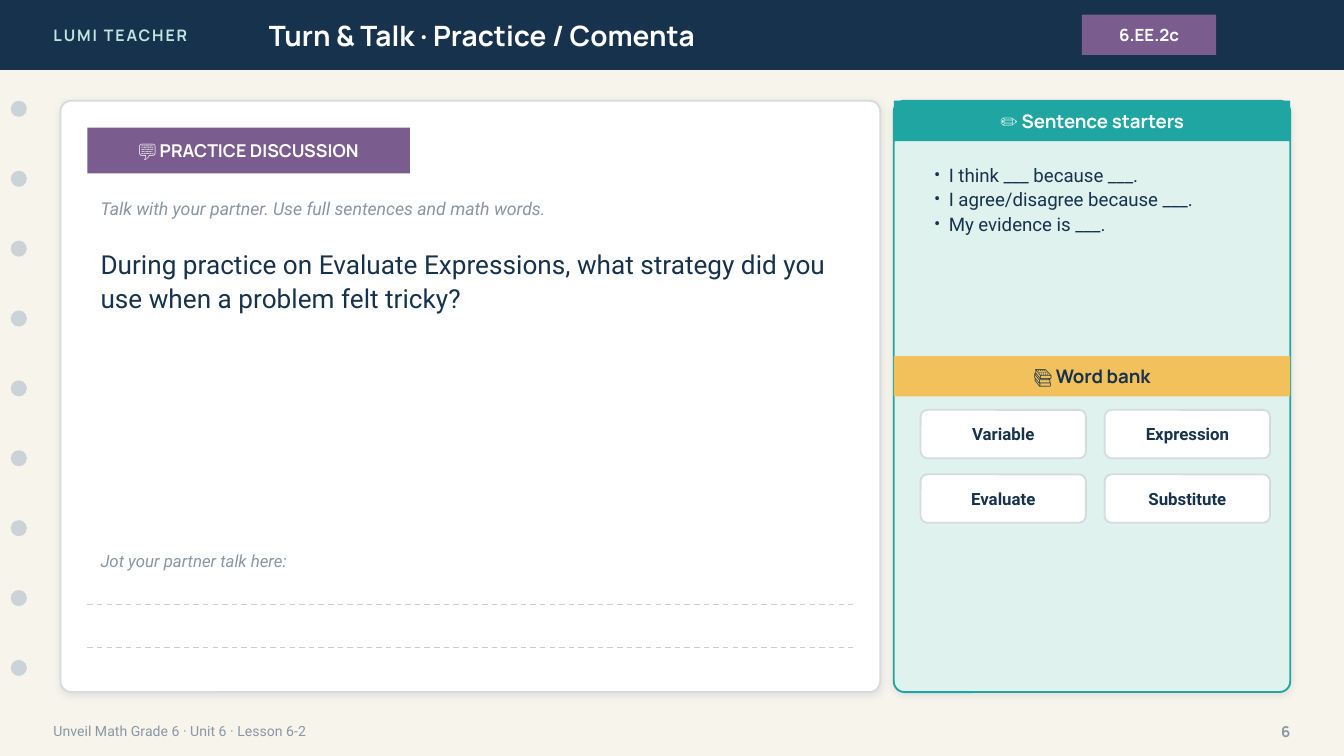
from dataclasses import dataclass
from typing import Optional

from lxml import etree
from pptx import Presentation
from pptx.dml.color import RGBColor
from pptx.enum.dml import MSO_LINE
from pptx.enum.shapes import MSO_CONNECTOR, MSO_SHAPE
from pptx.enum.text import MSO_ANCHOR, MSO_AUTO_SIZE, PP_ALIGN
from pptx.oxml.ns import qn
from pptx.util import Inches, Pt

RECT, ROUNDED, OVAL = MSO_SHAPE.RECTANGLE, MSO_SHAPE.ROUNDED_RECTANGLE, MSO_SHAPE.OVAL
LEFT, CENTER, RIGHT = PP_ALIGN.LEFT, PP_ALIGN.CENTER, PP_ALIGN.RIGHT
TOP, MIDDLE = MSO_ANCHOR.TOP, MSO_ANCHOR.MIDDLE
NO_AUTOFIT, STRAIGHT, DASH = MSO_AUTO_SIZE.NONE, MSO_CONNECTOR.STRAIGHT, MSO_LINE.DASH


@dataclass(frozen=True)
class TextStyle:
    size: float
    color: str
    font: str = "Roboto"
    bold: bool = False
    italic: bool = False
    align: PP_ALIGN = LEFT
    anchor: MSO_ANCHOR = MIDDLE
    line_spacing: float = 1.0
    tracking: float = 0


@dataclass(frozen=True)
class Theme:
    paper: str = "F7F4EC"
    navy: str = "17324D"
    white: str = "FFFFFF"
    purple: str = "7A5C8E"
    teal: str = "1FA6A2"
    mint: str = "DFF2EE"
    gold: str = "F2C15B"
    gray: str = "8A96A3"
    hole: str = "CBD3D9"
    border: str = "D6DBDF"
    rule: str = "C7CDD2"
    shadow: str = "1C2E42"
    brand = TextStyle(8.5, "BFE6E2", "Manrope", bold=True, tracking=1)
    title = TextStyle(15, white, "Manrope", bold=True)
    standard = TextStyle(9, white, "Manrope", bold=True, align=CENTER)
    badge = TextStyle(9.5, white, "Manrope", bold=True, align=CENTER)
    starters_head = TextStyle(10, white, "Manrope", bold=True, align=CENTER)
    words_head = TextStyle(10, navy, "Manrope", bold=True, align=CENTER)
    word = TextStyle(9, navy, bold=True, align=CENTER)
    direction = TextStyle(9.5, gray, italic=True)
    jot = TextStyle(9, gray, italic=True)
    question = TextStyle(14, navy, anchor=TOP, line_spacing=1.08)
    starter = TextStyle(10, navy, anchor=TOP, line_spacing=1.1)
    footer = TextStyle(7.5, gray)
    page = TextStyle(8, gray, "Manrope", bold=True, align=RIGHT)


@dataclass(frozen=True)
class Box:
    left: float
    top: float
    width: float
    height: float

    def lengths(self) -> list:
        return [Inches(v) for v in (self.left, self.top, self.width, self.height)]


THEME = Theme()
HEADER_HEIGHT = 0.52
CARD_TOP, CARD_HEIGHT = 0.75, 4.4
CARD = Box(0.45, CARD_TOP, 6.1, CARD_HEIGHT)
PANEL = Box(6.65, CARD_TOP, 2.95, CARD_HEIGHT)
CONTENT_LEFT, CONTENT_WIDTH = 0.65, 5.7
STARTERS = ["I think ___ because ___.", "I agree/disagree because ___.", "My evidence is ___."]
WORDS = ["Variable", "Expression", "Evaluate", "Substitute"]


def write(shape, text: str, style: TextStyle, bullet_indent: float = 0) -> None:
    frame = shape.text_frame
    frame.text = text
    frame.word_wrap = True
    frame.auto_size = NO_AUTOFIT
    frame.vertical_anchor = style.anchor
    for paragraph in frame.paragraphs:
        if bullet_indent:
            properties = paragraph._p.get_or_add_pPr()
            properties.set("marL", str(Inches(bullet_indent)))
            properties.set("indent", str(-Inches(bullet_indent)))
            etree.SubElement(properties, qn("a:buFont"), typeface=style.font)
            etree.SubElement(properties, qn("a:buChar"), char="•")
        paragraph.alignment = style.align
        paragraph.line_spacing = style.line_spacing
        paragraph.space_before = Pt(0)
        for run in paragraph.runs:
            font = run.font
            font.name, font.size = style.font, Pt(style.size)
            font.bold, font.italic = style.bold, style.italic
            font.color.rgb = RGBColor.from_string(style.color)
            if style.tracking:
                run._r.get_or_add_rPr().set("spc", str(int(style.tracking * 100)))


def add_text(slide, box: Box, text: str, style: TextStyle) -> None:
    write(slide.shapes.add_textbox(*box.lengths()), text, style)


def fill_placeholder(slide, index: int, box: Box, text: str, style: TextStyle,
                     bullet_indent: float = 0) -> None:
    """Place a template placeholder above everything drawn so far."""
    holder = slide.placeholders[index]
    holder.left, holder.top, holder.width, holder.height = box.lengths()
    write(holder, text, style, bullet_indent)
    slide.shapes._spTree.append(holder._element)


def add_block(slide, box: Box, fill: str, kind: MSO_SHAPE = RECT, border: Optional[str] = None,
              radius: float = 0, text: str = "", style: Optional[TextStyle] = None):
    block = slide.shapes.add_shape(kind, *box.lengths())
    block.shadow.inherit = False
    block.fill.solid()
    block.fill.fore_color.rgb = RGBColor.from_string(fill)
    if border:
        block.line.color.rgb = RGBColor.from_string(border)
        block.line.width = Pt(1)
    else:
        block.line.fill.background()
    if radius:
        block.adjustments[0] = radius / min(box.width, box.height)
    if style:
        write(block, text, style)
    return block


def add_card(slide, box: Box, fill: str, border: str) -> None:
    """Draw a rounded card with a faint shadow below it."""
    card = add_block(slide, box, fill, ROUNDED, border, radius=0.08)
    effects = card._element.spPr.find(qn("a:effectLst"))
    shadow = etree.SubElement(effects, qn("a:outerShdw"), blurRad=str(Pt(4)),
                              dist=str(Pt(1)), dir="5400000", rotWithShape="0")
    color = etree.SubElement(shadow, qn("a:srgbClr"), val=THEME.shadow)
    etree.SubElement(color, qn("a:alpha"), val="10000")


def add_writing_line(slide, top: float) -> None:
    rule = slide.shapes.add_connector(
        STRAIGHT, Inches(CONTENT_LEFT), Inches(top),
        Inches(CONTENT_LEFT + CONTENT_WIDTH), Inches(top))
    rule.line.color.rgb = RGBColor.from_string(THEME.rule)
    rule.line.width = Pt(0.75)
    rule.line.dash_style = DASH
    etree.SubElement(rule._element.spPr, qn("a:effectLst"))


def draw_frame(slide) -> None:
    """Draw the header, binder holes and footer."""
    add_block(slide, Box(0, 0, 10, HEADER_HEIGHT), THEME.navy)
    add_text(slide, Box(0.3, 0, 2.4, HEADER_HEIGHT), "LUMI TEACHER", THEME.brand)
    fill_placeholder(slide, 0, Box(1.9, 0, 5.6, HEADER_HEIGHT),
                     "Turn & Talk · Practice / Comenta", THEME.title)
    add_block(slide, Box(8.05, 0.11, 1, 0.3), THEME.purple, text="6.EE.2c", style=THEME.standard)
    for hole in range(9):
        add_block(slide, Box(0.08, CARD_TOP + hole * 0.52, 0.12, 0.12), THEME.hole, OVAL)
    add_text(slide, Box(0.3, 5.3, 7, 0.28), "Unveil Math Grade 6 · Unit 6 · Lesson 6-2",
             THEME.footer)
    add_text(slide, Box(9.2, 5.3, 0.5, 0.28), "6", THEME.page)


def draw_discussion(slide) -> None:
    add_card(slide, CARD, THEME.white, THEME.border)
    add_block(slide, Box(CONTENT_LEFT, 0.95, 2.4, 0.34), THEME.purple,
              text="💬 PRACTICE DISCUSSION", style=THEME.badge)
    for top, height, text, style in (
        (1.4, 0.3, "Talk with your partner. Use full sentences and math words.", THEME.direction),
        (1.78, 2, "During practice on Evaluate Expressions, what strategy did you use "
                  "when a problem felt tricky?", THEME.question),
        (4.05, 0.25, "Jot your partner talk here:", THEME.jot),
    ):
        add_text(slide, Box(CONTENT_LEFT, top, CONTENT_WIDTH, height), text, style)
    for top in (4.5, 4.82):
        add_writing_line(slide, top)


def draw_support(slide) -> None:
    add_card(slide, PANEL, THEME.mint, THEME.teal)
    add_block(slide, Box(PANEL.left, CARD_TOP, PANEL.width, 0.3), THEME.teal,
              text="✏️ Sentence starters", style=THEME.starters_head)
    fill_placeholder(slide, 1, Box(6.85, 1.15, 2.6, 1.4), "\n".join(STARTERS),
                     THEME.starter, bullet_indent=0.11)
    add_block(slide, Box(PANEL.left, 2.65, PANEL.width, 0.3), THEME.gold,
              text="📚 Word bank", style=THEME.words_head)
    for position, word in enumerate(WORDS):
        row, column = divmod(position, 2)
        add_block(slide, Box(6.85 + column * 1.37, 3.05 + row * 0.48, 1.23, 0.36),
                  THEME.white, ROUNDED, THEME.border, 0.05, word, THEME.word)


def main() -> None:
    deck = Presentation()
    deck.slide_width = Inches(10)
    deck.slide_height = deck.slide_width * 9 // 16
    slide = deck.slides.add_slide(deck.slide_layouts[1])
    slide.background.fill.solid()
    slide.background.fill.fore_color.rgb = RGBColor.from_string(THEME.paper)
    draw_frame(slide)
    draw_discussion(slide)
    draw_support(slide)
    deck.save("out.pptx")


if __name__ == "__main__":
    main()
